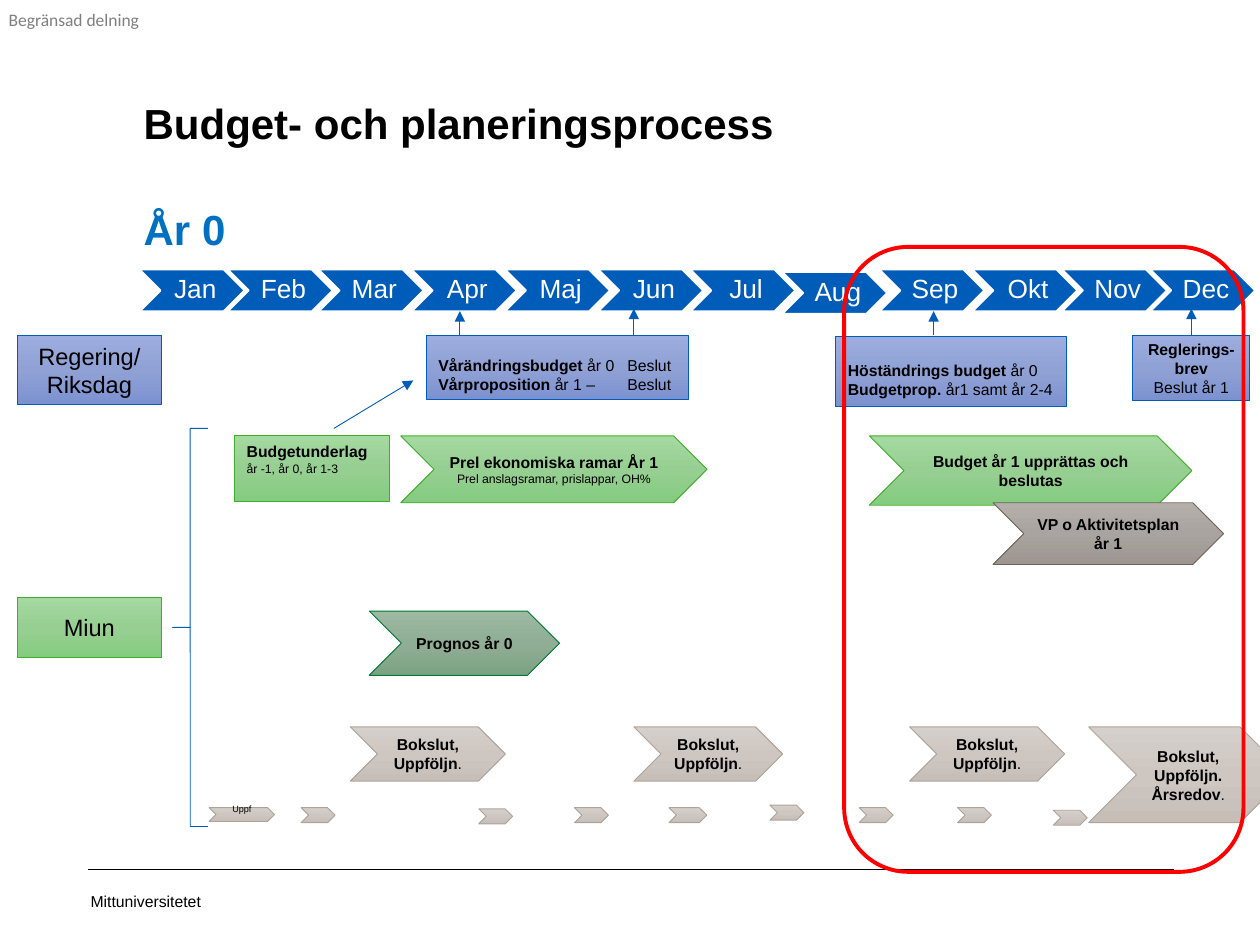
"""Build the year 0 budget and planning timeline slide."""
import copy
from dataclasses import dataclass
from typing import Any, Optional

import lxml.etree
import pptx
import pptx.dml.color
import pptx.enum.shapes
import pptx.enum.text
import pptx.oxml.ns
import pptx.util

Pt = pptx.util.Pt
qn = pptx.oxml.ns.qn
Kind = pptx.enum.shapes.MSO_SHAPE
Align = pptx.enum.text.PP_ALIGN
Anchor = pptx.enum.text.MSO_ANCHOR
Line = pptx.enum.shapes.MSO_CONNECTOR

BLUE = "005CB9"
BLACK = "000000"


@dataclass
class Paint:
    stops: tuple[str, ...]
    line: str
    width: float = 0.5


@dataclass
class Part:
    text: str
    bold: bool = False
    size: float = 9
    color: str = BLACK


@dataclass
class Box:
    kind: Any
    left: float
    top: float
    width: float
    height: float
    paint: Paint
    rows: tuple[tuple[Part, ...], ...] = ()
    pad: tuple[float, float, float, float] = (3.6, 3.6, 3.6, 3.6)
    align: Any = Align.CENTER
    anchor: Any = Anchor.MIDDLE
    space: float = 1
    tab: Optional[float] = None


SKY = Paint(("9DADDE", "90A1D5", "7C92D0"), BLUE)
GREEN = Paint(("A4D9A0", "97CF93", "84CC7F"), "3FAE2A")
PINE = Paint(("9DB9A2", "90AE95", "7CA282"), "007934")
BROWN = Paint(("B5AFAC", "AAA4A0", "9D9590"), "706259")
SAND = Paint(("D6D0CC", "CDC6C1", "C7BEB8"), "AEA299")
MONTH = Paint((BLUE,), "FFFFFF", 1)
BRACE = Paint((), BLUE)
FRAME = Paint((), "FF0000", 2.25)

MONTHS = {"Jan": 79.9, "Feb": 130.3, "Mar": 182.2, "Apr": 235.4, "Maj": 288.7, "Jun": 342,
          "Jul": 394.6, "Aug": 447.1, "Sep": 502.6, "Okt": 555.8, "Nov": 607, "Dec": 657.4}
CLOSE = ((Part("Bokslut, Uppföljn", True), Part(".")),)
NOTE = (7.2, 3.6, 0, 3.6)

ORDERS = Box(Kind.RECTANGLE, 647.3, 191.5, 67, 37.4, SKY,
             ((Part("Reglerings-brev", True),), (Part("Beslut år 1"),)), (7.2, 3.6, 7.2, 3.6))
BOXES = (
    Box(Kind.RECTANGLE, 133.9, 249.1, 88.6, 37.4, GREEN,
        ((Part("Budgetunderlag", True),), (Part("år -1, år 0, år 1-3", size=7),)),
        NOTE, Align.LEFT, Anchor.TOP),
    Box(Kind.RECTANGLE, 477.4, 192.2, 131.8, 40.3, SKY,
        ((Part("Höständrings budget ", True), Part("år 0")),
         (Part("Budgetprop. ", True), Part("år1 samt år 2-4"))),
        (7.2, 14, 0, 3.6), Align.LEFT, Anchor.TOP),
    Box(Kind.RECTANGLE, 243.4, 191.5, 149.8, 36.7, SKY,
        ((Part("Vårändringsbudget", True), Part(" år 0\tBeslut")),
         (Part("Vårproposition", True), Part(" år 1 –\tBeslut"))),
        (7.2, 12.2, 0, 3.6), Align.LEFT, tab=108),
    Box(Kind.CHEVRON, 496.8, 249.1, 184.3, 39.6, GREEN,
        ((Part("Budget år 1 upprättas och beslutas", True),),)),
    Box(Kind.CHEVRON, 211, 349.2, 108.7, 36.7, PINE, ((Part("Prognos år 0", True),),)),
    Box(Kind.CHEVRON, 567.4, 287.3, 131.8, 35.3, BROWN,
        ((Part("VP o Aktivitetsplan år 1", True),),)),
    Box(Kind.CHEVRON, 229, 249.1, 175, 38.2, GREEN,
        ((Part("Prel ekonomiska ramar År 1", True),),
         (Part("Prel anslagsramar, prislappar, OH%", size=7),))),
    Box(Kind.RECTANGLE, 10.1, 191.5, 82.1, 39.6, SKY,
        ((Part("Regering/", size=13.5),), (Part("Riksdag", size=13.5),))),
    Box(Kind.RECTANGLE, 10.1, 341.3, 82.1, 34.6, GREEN, ((Part("Miun", size=13.5),),)),
    Box(Kind.CHEVRON, 200.2, 415.4, 88.6, 31, SAND, CLOSE),
    Box(Kind.CHEVRON, 362.2, 415.4, 85, 31, SAND, CLOSE),
    Box(Kind.CHEVRON, 519.8, 415.4, 88.6, 31, SAND, CLOSE),
    Box(Kind.CHEVRON, 622.1, 415.4, 113.8, 54.7, SAND,
        ((Part("Bokslut, Uppföljn.", True),), (Part("Årsredov", True), Part(".")))),
    Box(Kind.CHEVRON, 119.5, 461.5, 37.4, 7.9, SAND, ((Part("Uppf", size=5.2),),), (0, 0, 0, 6)),
)
SMALL = ((172.1, 461.5, 19.4), (273.6, 462.2, 19.4), (328.3, 461.5, 19.4), (382.3, 461.5, 21.6),
         (440, 460.1, 19.4), (491, 461.5, 19.4), (547.2, 461.5, 19.4), (601.9, 463, 19.4))
ARROWS = ((533.5, 191.5, 533.5, 177.8), (262.8, 191.5, 262.8, 177.8),
          (362.2, 191.5, 362.2, 176.4), (190.8, 244.8, 236.2, 217.4))


def tint(code: str) -> pptx.dml.color.RGBColor:
    return pptx.dml.color.RGBColor.from_string(code)


def style(run: Any, part: Part, face: str = "Arial") -> None:
    run.font.name = face
    run.font.size = Pt(part.size)
    run.font.bold = part.bold
    run.font.color.rgb = tint(part.color)


def fill(shape: Any, stops: tuple[str, ...]) -> None:
    if not stops:
        shape.fill.background()
    elif len(stops) == 1:
        shape.fill.solid()
        shape.fill.fore_color.rgb = tint(stops[0])
    else:
        shape.fill.gradient()
        shape.fill.gradient_angle = 270
        group = shape._element.spPr.find(qn("a:gradFill")).find(qn("a:gsLst"))
        group.append(copy.deepcopy(group[-1]))
        for rank, (stop, code) in enumerate(zip(shape.fill.gradient_stops, stops)):
            stop.color.rgb = tint(code)
            stop.position = rank / 2


def write(frame: Any, box: Box) -> None:
    frame.word_wrap = True
    frame.vertical_anchor = box.anchor
    frame.margin_left, frame.margin_top, frame.margin_right, frame.margin_bottom = map(Pt, box.pad)
    for rank, row in enumerate(box.rows):
        para = frame.add_paragraph() if rank else frame.paragraphs[0]
        para.alignment = box.align
        para.line_spacing = box.space
        if box.tab:
            tabs = lxml.etree.SubElement(para._p.get_or_add_pPr(), qn("a:tabLst"))
            lxml.etree.SubElement(tabs, qn("a:tab"), pos=str(Pt(box.tab)), algn="l")
        for part in row:
            run = para.add_run()
            run.text = part.text
            style(run, part)


def draw(slide: Any, box: Box) -> Any:
    shape = slide.shapes.add_shape(box.kind, *map(Pt, (box.left, box.top, box.width, box.height)))
    shape.shadow.inherit = False
    fill(shape, box.paint.stops)
    shape.line.color.rgb = tint(box.paint.line)
    shape.line.width = Pt(box.paint.width)
    if box.rows:
        write(shape.text_frame, box)
    return shape


def link(slide: Any, ends: tuple[float, ...], code: str, width: float, head: bool) -> Any:
    line = slide.shapes.add_connector(Line.STRAIGHT, *map(Pt, ends))
    line.line.color.rgb = tint(code)
    line.line.width = Pt(width)
    if head:
        lxml.etree.SubElement(line.line._get_or_add_ln(), qn("a:tailEnd"), type="triangle")
    lxml.etree.SubElement(line._element.spPr, qn("a:effectLst"))
    return line


def label(slide: Any, area: tuple[float, ...], part: Part, face: str, anchor: Any) -> None:
    frame = slide.shapes.add_textbox(*map(Pt, area)).text_frame
    frame.text = part.text
    frame.word_wrap = True
    frame.vertical_anchor = anchor
    frame.margin_left = frame.margin_right = frame.margin_top = frame.margin_bottom = 0
    style(frame.paragraphs[0].runs[0], part, face)


def head(slide: Any) -> None:
    title = slide.shapes.title
    title.left, title.top, title.width, title.height = map(Pt, (74.9, 66.2, 507.6, 75.6))
    frame = title.text_frame
    frame.text = "Budget- och planeringsprocess\nÅr 0"
    frame.auto_size = pptx.enum.text.MSO_AUTO_SIZE.NONE
    frame.vertical_anchor = Anchor.TOP
    for para, code, gap in zip(frame.paragraphs, (BLACK, "0070C0"), (0, 45)):
        para.alignment = Align.LEFT
        para.line_spacing = Pt(15)
        para.space_before = Pt(gap)
        style(para.runs[0], Part("", True, 24, code))


def main() -> None:
    deck = pptx.Presentation()
    deck.slide_width, deck.slide_height = Pt(720), Pt(540)
    slide = deck.slides.add_slide(deck.slide_layouts[5])
    head(slide)
    label(slide, (51.8, 500.4, 160, 28.8), Part("Mittuniversitetet"), "Arial", Anchor.MIDDLE)
    label(slide, (5, 5, 90, 12.2), Part("Begränsad delning", False, 10, "7F7F7F"),
          "Calibri", Anchor.TOP)
    link(slide, (50.4, 496.8, 671, 496.8), BLACK, 0.25, False)
    for name, left in MONTHS.items():
        top = 155.5 if name == "Aug" else 154.1
        draw(slide, Box(Kind.CHEVRON, left, top, 59.8, 23.8, MONTH,
                        ((Part(name, size=15, color="FFFFFF"),),), (5, 1.4, 1.4, 1.4), space=0.9))
    for box in BOXES:
        draw(slide, box)
    for left, top, width in SMALL:
        draw(slide, Box(Kind.CHEVRON, left, top, width, 8.6, SAND))
    orders = draw(slide, ORDERS)
    for ends in ARROWS:
        link(slide, ends, BLUE, 0.5, True)
    link(slide, (680.8, 191.5, 680.8, 176.4), BLUE, 0.5, True).begin_connect(orders, 0)
    brace = draw(slide, Box(Kind.LEFT_BRACE, 98.6, 244.8, 20.2, 227.5, BRACE))
    brace.adjustments[0] = 0
    frame = draw(slide, Box(Kind.ROUNDED_RECTANGLE, 482.4, 141.1, 228.2, 357.1, FRAME))
    frame.adjustments[0] = 0.16
    deck.save("out.pptx")


if __name__ == "__main__":
    main()
